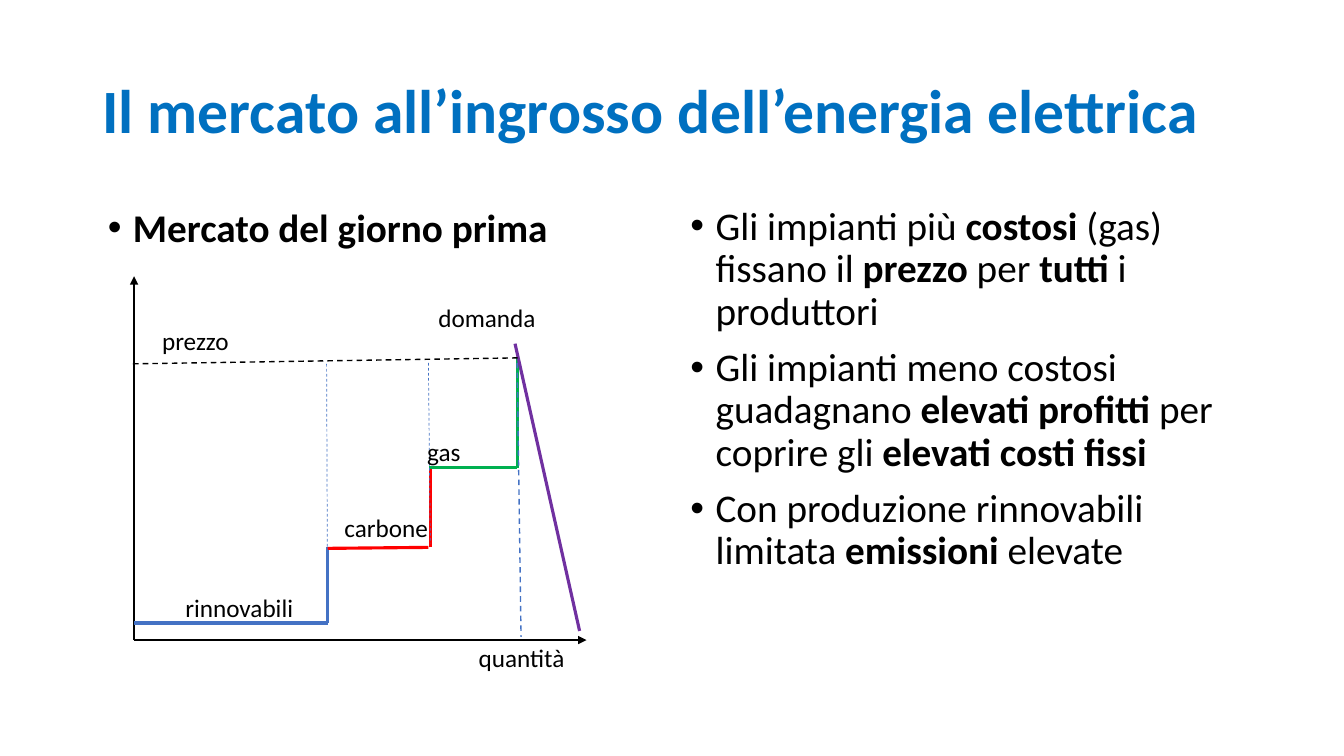
import pptx
import pptx.util
import pptx.dml.color
import pptx.enum.dml
import pptx.enum.shapes
import pptx.enum.text
import pptx.oxml.ns
from lxml import etree

Pt = pptx.util.Pt
RGBColor = pptx.dml.color.RGBColor
BLACK = RGBColor(0, 0, 0)
TITLE = RGBColor(0x00, 0x70, 0xC0)
BLUE = RGBColor(0x44, 0x72, 0xC4)
RED = RGBColor(0xFF, 0, 0)
GREEN = RGBColor(0x00, 0xB0, 0x50)
PURPLE = RGBColor(0x70, 0x30, 0xA0)

HEAD = "Il mercato all’ingrosso dell’energia elettrica"
LEFT = ["*Mercato del giorno prima*"]
RIGHT = [
    "Gli impianti più *costosi* (gas) fissano il *prezzo* per *tutti* i produttori",
    "Gli impianti meno costosi guadagnano *elevati profitti *per coprire gli *elevati costi fissi*",
    "Con produzione rinnovabili limitata *emissioni* elevate",
]
AXES = [
    (95.8, 457.2, 95.8, 197.3),
    (95.8, 457.2, 419, 457.2),
]
SOLID = [
    (95.8, 445, 234, 445, BLUE),
    (234, 445, 234, 391, BLUE),
    (234, 391.7, 306, 391, RED),
    (307.4, 391, 307.4, 334.1, RED),
    (306.7, 334.1, 369.4, 334.1, GREEN),
    (369.4, 334.1, 369.4, 255.6, GREEN),
    (367.9, 245.5, 414, 450.7, PURPLE),
]
DASHED = [
    (95, 259.9, 371.5, 255.6, BLACK, 1),
    (369.4, 259.2, 372.2, 455, BLUE, 1),
    (233.3, 259.9, 234, 439.9, BLUE, 0.5),
    (306, 259.2, 307.4, 388.1, BLUE, 0.5),
]
LABELS = [
    ("rinnovabili", 125.3, 419.8, 92.2, False),
    ("carbone", 239, 362.2, 74.9, False),
    ("gas", 298.1, 308.2, 38.9, False),
    ("domanda", 306, 212.4, 99.4, True),
    ("prezzo", 108.7, 229, 62.6, False),
    ("quantità", 334.8, 455, 124.6, True),
]


def place(shape, x, y, w, h):
    shape.left, shape.top, shape.width, shape.height = Pt(x), Pt(y), Pt(w), Pt(h)


def style(run, size, color=BLACK, bold=False):
    run.font.name = "Calibri"
    run.font.size = Pt(size)
    run.font.color.rgb = color
    run.font.bold = bold


def fill_list(holder, items):
    frame = holder.text_frame
    frame.auto_size = pptx.enum.text.MSO_AUTO_SIZE.NONE
    for n, item in enumerate(items):
        para = frame.add_paragraph() if n else frame.paragraphs[0]
        para.line_spacing = 0.9
        para.space_before = Pt(10)
        props = para._p.get_or_add_pPr()
        props.set("marL", str(Pt(18)))
        props.set("indent", str(Pt(-18)))
        for k, part in enumerate(item.split("*")):
            if part:
                run = para.add_run()
                run.text = part
                style(run, 28, bold=k % 2 == 1)


def draw(slide, x1, y1, x2, y2, color, width):
    line = slide.shapes.add_connector(
        pptx.enum.shapes.MSO_CONNECTOR.STRAIGHT, Pt(x1), Pt(y1), Pt(x2), Pt(y2))
    line.line.color.rgb = color
    line.line.width = Pt(width)
    etree.SubElement(line._element.spPr, pptx.oxml.ns.qn("a:effectLst"))
    return line


def main():
    deck = pptx.Presentation()
    deck.slide_width, deck.slide_height = Pt(960), Pt(540)
    slide = deck.slides.add_slide(deck.slide_layouts[3])
    title, left, right = slide.placeholders

    place(title, 66, 28.8, 828, 104.4)
    frame = title.text_frame
    frame.text = HEAD
    frame.auto_size = pptx.enum.text.MSO_AUTO_SIZE.NONE
    frame.vertical_anchor = pptx.enum.text.MSO_ANCHOR.MIDDLE
    para = frame.paragraphs[0]
    para.alignment = pptx.enum.text.PP_ALIGN.LEFT
    para.line_spacing = 0.9
    style(para.runs[0], 44, TITLE, True)

    place(left, 69.8, 145.4, 408.2, 342.7)
    fill_list(left, LEFT)
    place(right, 486, 144, 408.2, 342.7)
    fill_list(right, RIGHT)

    for ends in AXES:
        axis = draw(slide, *ends, BLACK, 1.5)
        tail = etree.SubElement(axis.line._get_or_add_ln(), pptx.oxml.ns.qn("a:tailEnd"))
        tail.set("type", "triangle")
    for step in SOLID:
        draw(slide, *step, 2.25)
    for guide in DASHED:
        draw(slide, *guide).line.dash_style = pptx.enum.dml.MSO_LINE.DASH

    for text, x, y, w, wrap in LABELS:
        box = slide.shapes.add_textbox(Pt(x), Pt(y), Pt(w), Pt(28.8))
        box.text_frame.text = text
        box.text_frame.word_wrap = wrap
        box.text_frame.auto_size = pptx.enum.text.MSO_AUTO_SIZE.SHAPE_TO_FIT_TEXT
        style(box.text_frame.paragraphs[0].runs[0], 18)

    deck.save("out.pptx")


if __name__ == "__main__":
    main()
